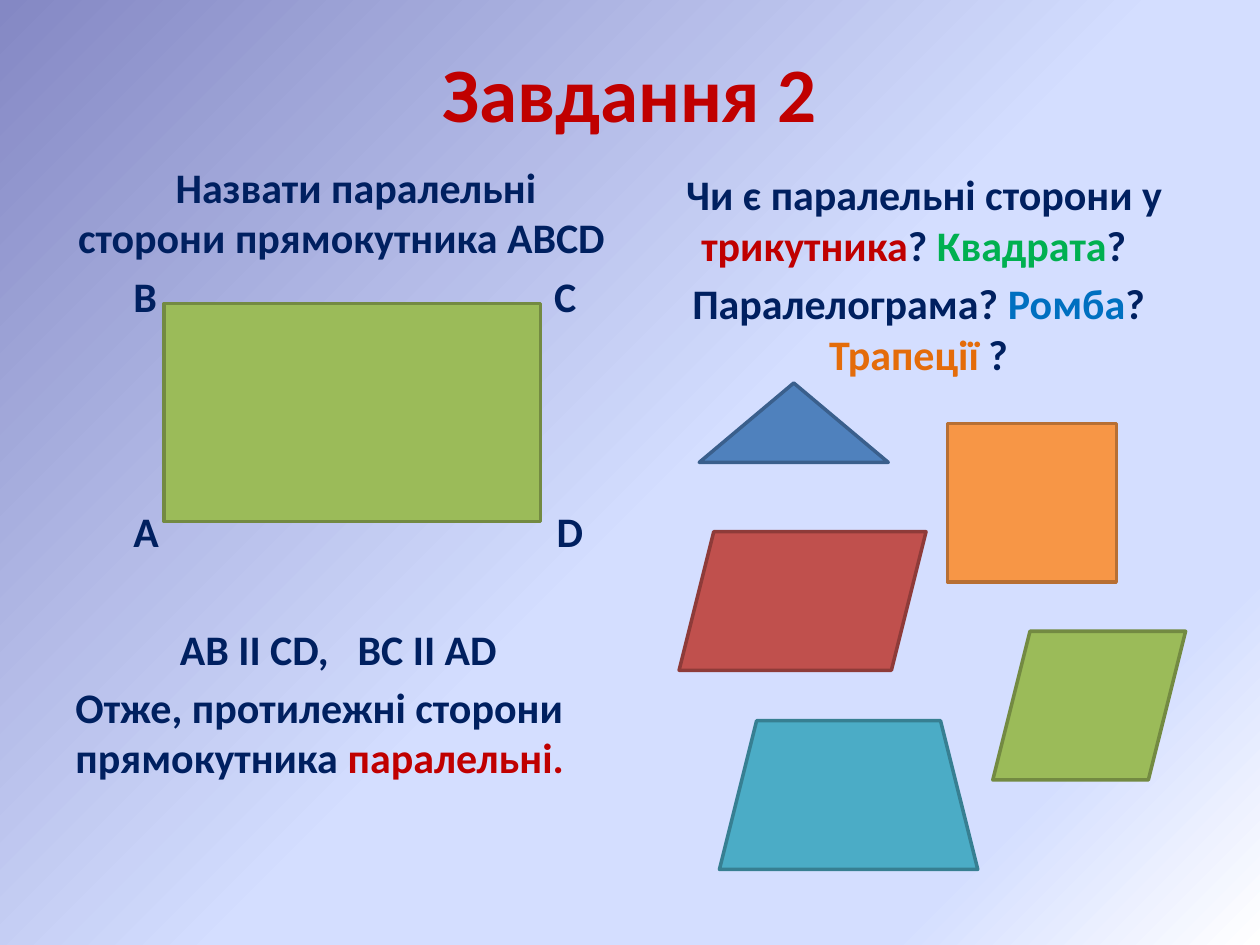
"""Build a geometry task slide about parallel sides of plane figures."""
from dataclasses import dataclass

import lxml.etree
import pptx
import pptx.dml.color
import pptx.enum.shapes
import pptx.enum.text
import pptx.oxml.ns
import pptx.util

Inches = pptx.util.Inches
RGBColor = pptx.dml.color.RGBColor
MSO_SHAPE = pptx.enum.shapes.MSO_SHAPE
PP_ALIGN = pptx.enum.text.PP_ALIGN
MSO_ANCHOR = pptx.enum.text.MSO_ANCHOR
qn = pptx.oxml.ns.qn

NAVY = RGBColor(0x00, 0x20, 0x60)
CRIMSON = RGBColor(0xC0, 0x00, 0x00)
GREEN = RGBColor(0x00, 0xB0, 0x50)
BLUE = RGBColor(0x00, 0x70, 0xC0)
ORANGE = RGBColor(0xE4, 0x6C, 0x0A)
LIME_FILL = RGBColor(0x9B, 0xBB, 0x59)
LIME_EDGE = RGBColor(0x73, 0x8A, 0x42)
BLUE_FILL = RGBColor(0x4F, 0x81, 0xBD)
BLUE_EDGE = RGBColor(0x3A, 0x5F, 0x8C)
ORANGE_FILL = RGBColor(0xF7, 0x96, 0x46)
ORANGE_EDGE = RGBColor(0xB7, 0x6F, 0x34)
RED_FILL = RGBColor(0xC0, 0x50, 0x4D)
RED_EDGE = RGBColor(0x8E, 0x3B, 0x39)
TEAL_FILL = RGBColor(0x4B, 0xAC, 0xC6)
TEAL_EDGE = RGBColor(0x37, 0x7F, 0x92)
SKY_STOPS = (
    (0, RGBColor(0x84, 0x88, 0xC4)),
    (53, RGBColor(0xD4, 0xDE, 0xFF)),
    (83, RGBColor(0xD4, 0xDE, 0xFF)),
    (100, RGBColor(0xFF, 0xFF, 0xFF)),
)


@dataclass(frozen=True)
class Line:
    runs: tuple[tuple[str, RGBColor], ...]
    align: PP_ALIGN = PP_ALIGN.LEFT
    size: float = 24
    before: float = 0
    first_indent: float = 0


@dataclass(frozen=True)
class Label:
    text: str
    left: float
    top: float
    width: float


@dataclass(frozen=True)
class Figure:
    kind: MSO_SHAPE
    box: tuple[float, float, float, float]
    fill: RGBColor
    edge: RGBColor


TITLE = (Line((("Завдання 2", CRIMSON),), PP_ALIGN.CENTER, 44),)
RECTANGLE_TASK = (
    Line((("Назвати паралельні сторони прямокутника АВСD", NAVY),),
         PP_ALIGN.CENTER, first_indent=0.23),
)
CONCLUSION = (
    Line((("Отже, протилежні сторони прямокутника ", NAVY), ("паралельні.", CRIMSON))),
)
FIGURES_TASK = (
    Line((("Чи є паралельні сторони у ", NAVY), ("трикутника", CRIMSON), ("? ", NAVY),
          ("Квадрата", GREEN), ("? ", NAVY)),
         PP_ALIGN.CENTER, first_indent=0.09),
    Line((("Паралелограма? ", NAVY), ("Ромба", BLUE), ("? ", NAVY),
          ("Трапеції", ORANGE), (" ?", NAVY)), PP_ALIGN.CENTER, before=4.8),
)
LABELS = (
    Label("B", 0.96, 2.1, 0.5),
    Label("C", 4.3, 2.1, 0.5),
    Label("A", 0.96, 3.96, 0.5),
    Label("D", 4.32, 3.96, 0.5),
    Label("AB II CD,", 1.33, 4.9, 1.4),
    Label("BC II AD", 2.74, 4.9, 1.4),
)
FIGURES = (
    Figure(MSO_SHAPE.RECTANGLE, (1.3, 2.41, 2.99, 1.73), LIME_FILL, LIME_EDGE),
    Figure(MSO_SHAPE.ISOSCELES_TRIANGLE, (5.55, 3.04, 1.5, 0.63), BLUE_FILL, BLUE_EDGE),
    Figure(MSO_SHAPE.RECTANGLE, (7.52, 3.36, 1.34, 1.26), ORANGE_FILL, ORANGE_EDGE),
    Figure(MSO_SHAPE.PARALLELOGRAM, (5.39, 4.22, 1.96, 1.1), RED_FILL, RED_EDGE),
    Figure(MSO_SHAPE.PARALLELOGRAM, (7.88, 5.01, 1.53, 1.18), LIME_FILL, LIME_EDGE),
    Figure(MSO_SHAPE.TRAPEZOID, (5.71, 5.72, 2.05, 1.18), TEAL_FILL, TEAL_EDGE),
)


def paint_background(slide) -> None:
    fill = slide.background.fill
    fill.gradient()
    fill.gradient_angle = 315
    stops = slide.element.find(".//" + qn("a:gsLst"))
    for stop in list(stops):
        stops.remove(stop)
    for percent, color in SKY_STOPS:
        stop = lxml.etree.SubElement(stops, qn("a:gs"), pos=str(percent * 1000))
        lxml.etree.SubElement(stop, qn("a:srgbClr"), val=str(color))


def write_line(paragraph, line: Line) -> None:
    paragraph.alignment = line.align
    paragraph.space_before = pptx.util.Pt(line.before)
    paragraph._p.get_or_add_pPr().set("indent", str(Inches(line.first_indent)))
    for text, color in line.runs:
        run = paragraph.add_run()
        run.text = text
        run.font.name = "Calibri"
        run.font.size = pptx.util.Pt(line.size)
        run.font.bold = True
        run.font.color.rgb = color


def add_text(slide, box: tuple[float, float, float, float], lines: tuple[Line, ...],
             anchor: MSO_ANCHOR = MSO_ANCHOR.TOP) -> None:
    frame = slide.shapes.add_textbox(*map(Inches, box)).text_frame
    frame.word_wrap = True
    frame.vertical_anchor = anchor
    for index, line in enumerate(lines):
        write_line(frame.add_paragraph() if index else frame.paragraphs[0], line)


def add_label(slide, label: Label) -> None:
    box = (label.left, label.top, label.width, 0.5)
    add_text(slide, box, (Line(((label.text, NAVY),)),))


def add_figure(slide, figure: Figure) -> None:
    outline = slide.shapes.add_shape(figure.kind, *map(Inches, figure.box))
    outline.shadow.inherit = False
    outline.fill.solid()
    outline.fill.fore_color.rgb = figure.fill
    outline.line.color.rgb = figure.edge
    outline.line.width = pptx.util.Pt(2)


def main() -> None:
    deck = pptx.Presentation()
    deck.slide_width, deck.slide_height = Inches(10), Inches(7.5)
    slide = deck.slides.add_slide(deck.slide_layouts[6])
    paint_background(slide)
    add_text(slide, (0.5, 0.3, 9, 0.85), TITLE, MSO_ANCHOR.MIDDLE)
    add_text(slide, (0.5, 1.23, 4.42, 0.91), RECTANGLE_TASK)
    add_text(slide, (0.5, 5.36, 4.42, 0.91), CONCLUSION)
    add_text(slide, (5.08, 1.29, 4.42, 1.8), FIGURES_TASK)
    for figure in FIGURES:
        add_figure(slide, figure)
    for label in LABELS:
        add_label(slide, label)
    deck.save("out.pptx")


if __name__ == "__main__":
    main()
